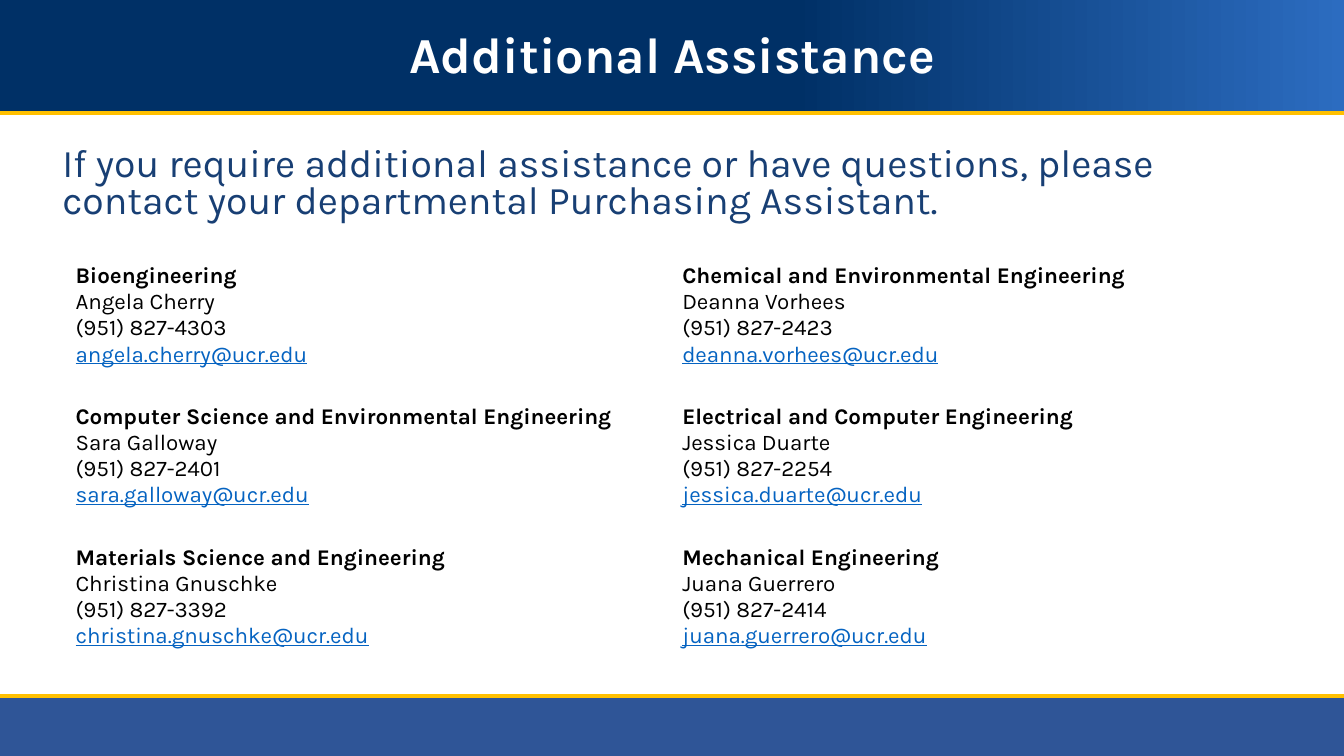
from dataclasses import dataclass

from lxml.etree import SubElement
from pptx import Presentation
from pptx.dml.color import RGBColor
from pptx.enum.shapes import MSO_CONNECTOR as Connector, MSO_SHAPE as Preset
from pptx.enum.text import MSO_ANCHOR as Anchor, MSO_AUTO_SIZE as AutoSize, PP_ALIGN as Align
from pptx.oxml.ns import qn
from pptx.slide import Slide
from pptx.util import Cm, Pt


@dataclass(frozen=True)
class Theme:
    font: str = "Karla"
    navy: str = "003066"
    sky: str = "2C6CC0"
    footer: str = "2F5597"
    gold: str = "FFC000"
    intro: str = "183F74"
    link: str = "0563C1"
    black: str = "000000"
    white: str = "FFFFFF"
    title_size: int = 36
    intro_size: int = 28
    contact_size: int = 16


@dataclass(frozen=True)
class Band:
    top: float
    height: float
    colors: tuple[str, ...]
    rule_top: float


@dataclass(frozen=True)
class Contact:
    department: str
    name: str
    phone: str
    email: str


THEME = Theme()
WIDTH, HEIGHT = 33.87, 19.05
GRADIENT_STOPS = (0.59, 1.0)
COLUMN_WIDTHS = (15.29, 15.24)
ROW_HEIGHT = 3.55

BANDS = (
    Band(0, 2.82, (THEME.navy, THEME.sky), 2.84),
    Band(17.53, 1.52, (THEME.footer,), 17.53),
)
CONTACTS = (
    Contact("Bioengineering", "Angela Cherry", "(951) 827-4303", "angela.cherry@ucr.edu"),
    Contact("Chemical and Environmental Engineering", "Deanna Vorhees",
            "(951) 827-2423", "deanna.vorhees@ucr.edu"),
    Contact("Computer Science and Environmental Engineering", "Sara Galloway",
            "(951) 827-2401", "sara.galloway@ucr.edu"),
    Contact("Electrical and Computer Engineering", "Jessica Duarte",
            "(951) 827-2254", "jessica.duarte@ucr.edu"),
    Contact("Materials Science and Engineering", "Christina Gnuschke",
            "(951) 827-3392", "christina.gnuschke@ucr.edu"),
    Contact("Mechanical Engineering", "Juana Guerrero",
            "(951) 827-2414", "juana.guerrero@ucr.edu"),
)


def apply(target, formats: dict) -> None:
    for name, value in formats.items():
        setattr(target, name, value)


def write(para, text: str, size: int, color: str, **formats) -> None:
    span = para.add_run()
    span.text = text
    apply(span.font, {"name": THEME.font, "size": Pt(size), **formats})
    span.font.color.rgb = RGBColor.from_string(color)


def draw_band(page: Slide, band: Band) -> None:
    box = page.shapes.add_shape(Preset.RECTANGLE, 0, Cm(band.top), Cm(WIDTH), Cm(band.height))
    box.shadow.inherit = False
    box.line.fill.background()
    if len(band.colors) == 1:
        box.fill.solid()
        box.fill.fore_color.rgb = RGBColor.from_string(band.colors[0])
    else:
        box.fill.gradient()
        box.fill.gradient_angle = 0
        for stop, position, color in zip(box.fill.gradient_stops, GRADIENT_STOPS, band.colors):
            stop.position = position
            stop.color.rgb = RGBColor.from_string(color)


def draw_rule(page: Slide, top: float) -> None:
    rule = page.shapes.add_connector(Connector.STRAIGHT, 0, Cm(top), Cm(WIDTH), Cm(top))
    rule.line.color.rgb = RGBColor.from_string(THEME.gold)
    rule.line.width = Pt(3)
    SubElement(rule.element.spPr, qn("a:effectLst"))


def draw_title(page: Slide, text: str) -> None:
    title = page.shapes.title
    apply(title, {"left": Cm(2.34), "top": Cm(0.46), "width": Cm(29.21), "height": Cm(1.98)})
    frame = title.text_frame
    apply(frame, {"word_wrap": True, "auto_size": AutoSize.NONE,
                  "vertical_anchor": Anchor.MIDDLE})
    para = frame.paragraphs[0]
    apply(para, {"alignment": Align.CENTER, "line_spacing": 0.9})
    write(para, text, THEME.title_size, THEME.white, bold=True)
    # Bring the title in front of its band
    title.element.getparent().append(title.element)


def draw_intro(page: Slide, text: str) -> None:
    box = page.shapes.add_textbox(Cm(1.32), Cm(3.58), Cm(31.24), Cm(2.36))
    box.text_frame.word_wrap = True
    para = box.text_frame.paragraphs[0]
    para.line_spacing = 0.8
    write(para, text, THEME.intro_size, THEME.intro)


def fill_contact(cell, contact: Contact) -> None:
    cell.fill.background()
    lines = (
        (contact.department, THEME.black, {"bold": True}),
        (contact.name, THEME.black, {"bold": False}),
        (contact.phone, THEME.black, {"bold": False}),
        (contact.email, THEME.link, {"bold": False, "underline": True}),
    )
    frame = cell.text_frame
    for index, (text, color, formats) in enumerate(lines):
        para = frame.add_paragraph() if index else frame.paragraphs[0]
        write(para, text, THEME.contact_size, color, **formats)


def draw_contacts(page: Slide, contacts: tuple[Contact, ...]) -> None:
    columns = len(COLUMN_WIDTHS)
    rows = len(contacts) // columns
    table = page.shapes.add_table(rows, columns, Cm(1.65), Cm(6.5),
                                  Cm(sum(COLUMN_WIDTHS)), Cm(rows * ROW_HEIGHT)).table
    apply(table, {"first_row": False, "horz_banding": False})
    for column, width in zip(table.columns, COLUMN_WIDTHS):
        column.width = Cm(width)
    for index, contact in enumerate(contacts):
        fill_contact(table.cell(*divmod(index, columns)), contact)


def main() -> None:
    deck = Presentation()
    apply(deck, {"slide_width": Cm(WIDTH), "slide_height": Cm(HEIGHT)})
    page = deck.slides.add_slide(deck.slide_layouts.get_by_name("Title Only"))

    # Header and footer
    for band in BANDS:
        draw_band(page, band)
        draw_rule(page, band.rule_top)

    # Text and contacts
    draw_title(page, "Additional Assistance")
    draw_intro(page, "If you require additional assistance or have questions, please "
                     "contact your departmental Purchasing Assistant.")
    draw_contacts(page, CONTACTS)
    deck.save("out.pptx")


if __name__ == "__main__":
    main()
